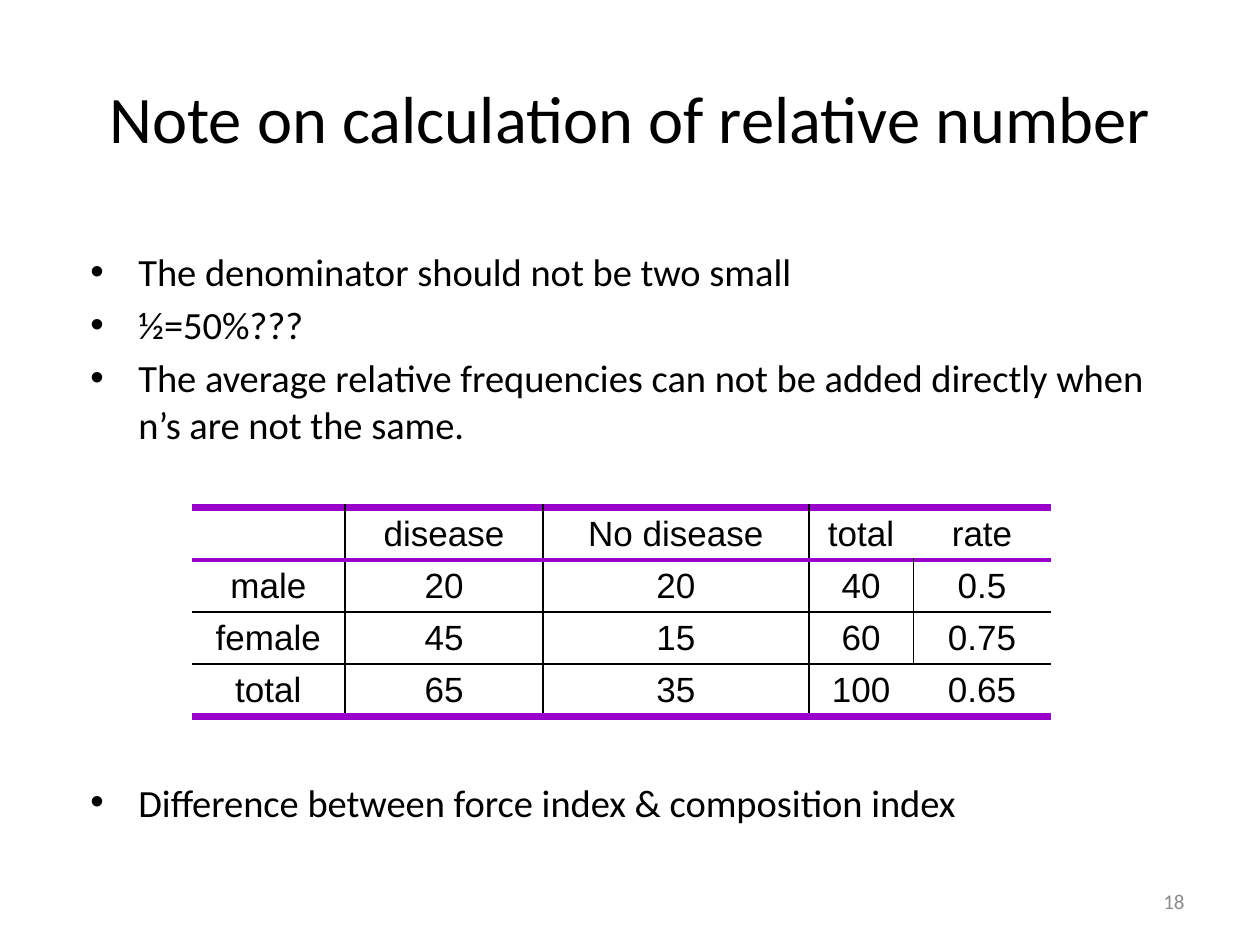
import pptx
import pptx.util
import pptx.dml.color
import pptx.enum.text
import pptx.oxml.ns
import lxml.etree

Inches = pptx.util.Inches
Pt = pptx.util.Pt
ALIGN = pptx.enum.text.PP_ALIGN
ANCHOR = pptx.enum.text.MSO_ANCHOR
qn = pptx.oxml.ns.qn

COLORS = {"text": "000000", "number": "8C8C8C", "grid": "000000", "rule": "9900CC"}

POINTS = [
    "The denominator should not be two small",
    "½=50%???",
    "The average relative frequencies can not be added directly when n’s are not the same.",
]
CLOSING_POINT = "Difference between force index & composition index"

RATES = [
    ["", "disease", "No disease", "total", "rate"],
    ["male", "20", "20", "40", "0.5"],
    ["female", "45", "15", "60", "0.75"],
    ["total", "65", "35", "100", "0.65"],
]
COLUMN_WIDTHS = [1.22, 1.57, 2.11, 0.83, 1.09]
ROW_HEIGHT = 0.41

THIN = ("grid", 1)
THICK = ("rule", 4.5)
ROW_LINES = [THICK, ("rule", 2.25), THIN, THIN, THICK]


def add_run(paragraph, text, size, font="Calibri", color="text"):
    run = paragraph.add_run()
    run.text = text
    run.font.size = Pt(size)
    run.font.name = font
    run.font.color.rgb = pptx.dml.color.RGBColor.from_string(COLORS[color])


def add_text_frame(slide, left, top, width, height, anchor):
    box = slide.shapes.add_textbox(Inches(left), Inches(top), Inches(width), Inches(height))
    frame = box.text_frame
    frame.word_wrap = True
    frame.vertical_anchor = anchor
    return frame


def add_line(slide, position, text, size, align, color="text"):
    paragraph = add_text_frame(slide, *position, ANCHOR.MIDDLE).paragraphs[0]
    paragraph.alignment = align
    add_run(paragraph, text, size, color=color)


def add_bullets(slide, position, points):
    frame = add_text_frame(slide, *position, ANCHOR.TOP)
    for index, point in enumerate(points):
        paragraph = frame.add_paragraph() if index else frame.paragraphs[0]
        if index:
            paragraph.space_before = Pt(4)
        properties = paragraph._p.get_or_add_pPr()
        properties.set("marL", str(Inches(0.38)))
        properties.set("indent", str(-Inches(0.38)))
        lxml.etree.SubElement(properties, qn("a:buFont"), typeface="Arial")
        lxml.etree.SubElement(properties, qn("a:buChar"), char="•")
        add_run(paragraph, point, 22)


def column_line(row, edge):
    """Give the line on a vertical edge; the rate column is ruled off only for the sexes."""
    if edge in (1, 2, 3) or (edge == 4 and row in (1, 2)):
        return THIN
    return None


def set_border(cell, side, line):
    color, width = line or (None, 0)
    border = lxml.etree.SubElement(
        cell._tc.get_or_add_tcPr(), qn("a:ln" + side), w=str(Pt(width)))
    if line is None:
        lxml.etree.SubElement(border, qn("a:noFill"))
    else:
        fill = lxml.etree.SubElement(border, qn("a:solidFill"))
        lxml.etree.SubElement(fill, qn("a:srgbClr"), val=COLORS[color])


def add_rate_table(slide, left, top):
    table = slide.shapes.add_table(
        len(RATES), len(COLUMN_WIDTHS), Inches(left), Inches(top),
        Inches(sum(COLUMN_WIDTHS)), Inches(ROW_HEIGHT * len(RATES))).table
    table.first_row = table.horz_banding = False
    for column, width in zip(table.columns, COLUMN_WIDTHS):
        column.width = Inches(width)
    for row, values in enumerate(RATES):
        table.rows[row].height = Inches(ROW_HEIGHT)
        for column, value in enumerate(values):
            cell = table.cell(row, column)
            cell.margin_top = cell.margin_bottom = Inches(0.04)
            cell.vertical_anchor = ANCHOR.MIDDLE
            set_border(cell, "L", column_line(row, column))
            set_border(cell, "R", column_line(row, column + 1))
            set_border(cell, "T", ROW_LINES[row])
            set_border(cell, "B", ROW_LINES[row + 1])
            cell.fill.background()
            if value:
                paragraph = cell.text_frame.paragraphs[0]
                paragraph.alignment = ALIGN.CENTER
                add_run(paragraph, value, 20, font="Arial")


def main():
    presentation = pptx.Presentation()
    presentation.slide_width = Inches(10)
    presentation.slide_height = Inches(7.5)
    slide = presentation.slides.add_slide(presentation.slide_layouts[6])

    add_line(slide, (0.5, 0.3, 9, 1.25), "Note on calculation of relative number", 38, ALIGN.CENTER)
    add_bullets(slide, (0.62, 1.92, 8.63, 1.75), POINTS)
    add_rate_table(slide, 1.52, 4.03)
    add_bullets(slide, (0.62, 6.13, 8.63, 0.48), [CLOSING_POINT])
    add_line(slide, (7.17, 6.95, 2.33, 0.4), "18", 12, ALIGN.RIGHT, "number")

    presentation.save("out.pptx")


if __name__ == "__main__":
    main()
